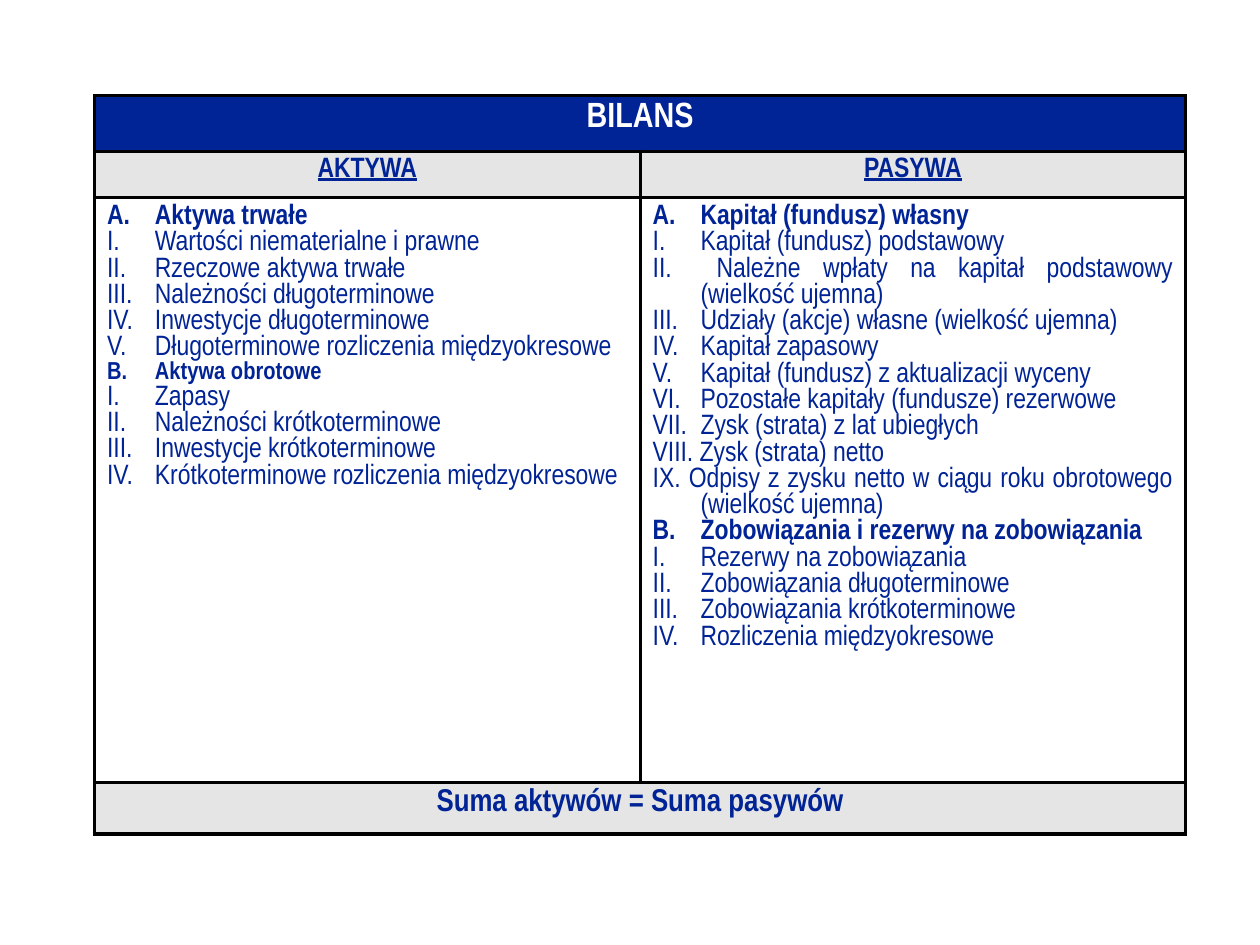
import pptx
import pptx.util
import pptx.dml.color
import pptx.enum.text
import pptx.oxml
import pptx.oxml.ns

HUES = {"navy": "002395", "white": "FFFFFF", "gray": "E5E5E5", "black": "000000"}
FONT = "Arial Narrow"
WIDE, HIGH = 10, 7.5
BOX = (0.75, 0.76, 8.66, 5.86)
ROWS = (0.44, 0.37, 4.64, 0.41)
ALIGN = pptx.enum.text.PP_ALIGN

ASSETS = (
    "A. \tAktywa trwałe",
    "I. \tWartości niematerialne i prawne",
    "II. \tRzeczowe aktywa trwałe",
    "III. \tNależności długoterminowe",
    "IV. \tInwestycje długoterminowe",
    "V. \tDługoterminowe rozliczenia międzyokresowe",
    "B. \tAktywa obrotowe",
    "I. \tZapasy",
    "II. \tNależności krótkoterminowe",
    "III. \tInwestycje krótkoterminowe",
    "IV. \tKrótkoterminowe rozliczenia międzyokresowe",
)
FUNDS = (
    "A. \tKapitał (fundusz) własny",
    "I. \tKapitał (fundusz) podstawowy",
    "II. \tNależne wpłaty na kapitał podstawowy (wielkość ujemna) ",
    "III. \tUdziały (akcje) własne (wielkość ujemna)",
    "IV. \tKapitał zapasowy",
    "V. \tKapitał (fundusz) z aktualizacji wyceny",
    "VI. \tPozostałe kapitały (fundusze) rezerwowe",
    "VII. \tZysk (strata) z lat ubiegłych",
    "VIII. Zysk (strata) netto",
    "IX. Odpisy z zysku netto w ciągu roku obrotowego (wielkość ujemna)",
    "B. \tZobowiązania i rezerwy na zobowiązania",
    "I. \tRezerwy na zobowiązania",
    "II. \tZobowiązania długoterminowe",
    "III. \tZobowiązania krótkoterminowe",
    "IV. \tRozliczenia międzyokresowe",
)


def color(name):
    return pptx.dml.color.RGBColor.from_string(HUES[name])


def border(cell):
    props = cell._tc.get_or_add_tcPr()
    for side in ("lnL", "lnR", "lnT", "lnB"):
        props.append(pptx.oxml.parse_xml(
            f'<a:{side} {pptx.oxml.ns.nsdecls("a")} w="{pptx.util.Pt(2)}">'
            f'<a:solidFill><a:srgbClr val="{HUES["black"]}"/></a:solidFill></a:{side}>'))


def paint(cell, fill):
    border(cell)
    if fill:
        cell.fill.solid()
        cell.fill.fore_color.rgb = color(fill)
    else:
        cell.fill.background()


def style(para, size, bold, ink, align, under=False):
    para.alignment = align
    props = para._p.get_or_add_pPr()
    props.set("marL", str(pptx.util.Inches(0.38)))
    props.set("indent", str(pptx.util.Inches(-0.38)))
    for run in para.runs:
        font = run.font
        font.name = FONT
        font.size = pptx.util.Pt(size)
        font.bold = bold
        font.underline = under
        font.color.rgb = color(ink)


def label(cell, text, size, ink="navy", under=False):
    cell.text_frame.text = text
    style(cell.text_frame.paragraphs[0], size, True, ink, ALIGN.CENTER, under)


def fill_list(cell, items, align, small=()):
    frame = cell.text_frame
    frame.text = "\n".join(items)
    for item, para in zip(items, frame.paragraphs):
        size = 14 if item in small else 16
        style(para, size, item.startswith(("A.", "B.")), "navy", align)


def sheet(slide, box):
    left, top, width, height = (pptx.util.Inches(part) for part in box)
    table = slide.shapes.add_table(len(ROWS), 2, left, top, width, height).table
    table.first_row = table.horz_banding = False
    for row, share in zip(table.rows, ROWS):
        row.height = int(height * share / sum(ROWS))
    for row, fill in enumerate(("navy", "gray", None, "gray")):
        for col in range(2):
            paint(table.cell(row, col), fill)
    for row in (0, 3):
        table.cell(row, 0).merge(table.cell(row, 1))
    label(table.cell(0, 0), "BILANS", 20, "white")
    for col, name in enumerate(("AKTYWA", "PASYWA")):
        label(table.cell(1, col), name, 16, under=True)
    fill_list(table.cell(2, 0), ASSETS, ALIGN.LEFT, small=("B. \tAktywa obrotowe",))
    fill_list(table.cell(2, 1), FUNDS, ALIGN.JUSTIFY)
    label(table.cell(3, 0), "Suma aktywów = Suma pasywów", 18)


def main():
    deck = pptx.Presentation()
    deck.slide_width = pptx.util.Inches(WIDE)
    deck.slide_height = pptx.util.Inches(HIGH)
    slide = deck.slides.add_slide(deck.slide_layouts[6])
    sheet(slide, BOX)
    deck.save("out.pptx")


if __name__ == "__main__":
    main()
